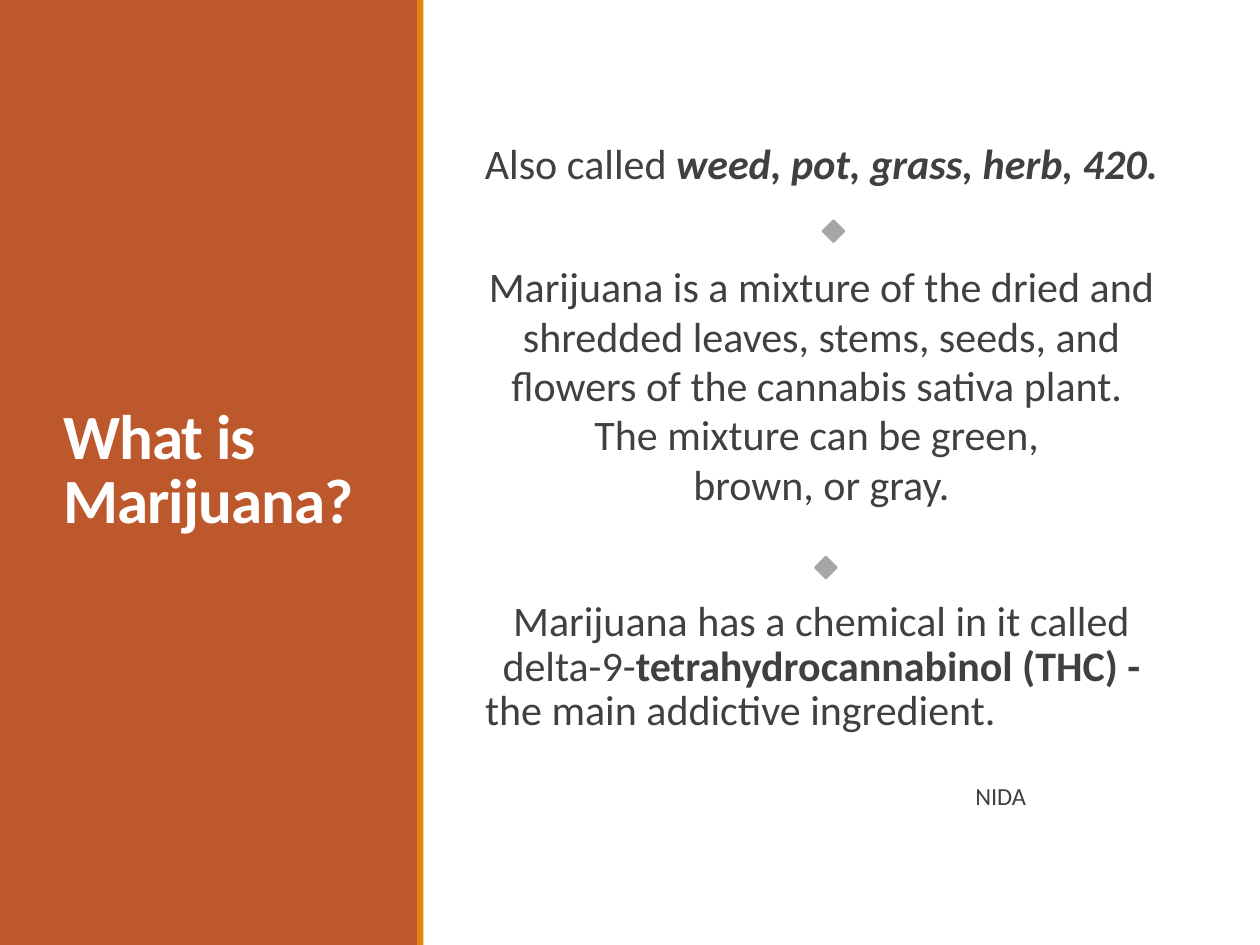
from dataclasses import dataclass

from lxml import etree
from pptx import Presentation
from pptx.dml.color import RGBColor
from pptx.enum.shapes import MSO_SHAPE
from pptx.enum.text import MSO_ANCHOR, MSO_AUTO_SIZE, PP_ALIGN
from pptx.oxml.ns import qn
from pptx.util import Inches, Pt

RECT, DIAMOND = MSO_SHAPE.RECTANGLE, MSO_SHAPE.DIAMOND
LEFT, CENTER = PP_ALIGN.LEFT, PP_ALIGN.CENTER
TOP, MIDDLE = MSO_ANCHOR.TOP, MSO_ANCHOR.MIDDLE
FONT = "Calibri"
RUST, ORANGE, GRAY, INK, WHITE = "BD582C", "E48312", "A6A6A6", "404040", "FFFFFF"
TIGHT, LOOSE = 0.88, 0.98


@dataclass
class Box:
    left: float
    top: float
    width: float
    height: float


@dataclass
class Para:
    """Runs are (text, style) pairs; style holds b for bold, i for italic."""
    runs: list
    before: float = 0
    after: float = 0
    line: float = LOOSE
    align: int = CENTER
    indent: float = 0.1
    right: float = 0.1
    size: float = 24


PARAS = [
    Para([("Also called ", ""), ("weed, pot, grass, herb, 420.", "bi")],
         after=2, line=TIGHT, indent=0, right=0),
    Para([("Marijuana is a mixture of the dried and shredded leaves, stems, "
           "seeds, and flowers of the cannabis sativa plant. ", "")], before=41),
    Para([("The mixture can be green, ", "")]),
    Para([("brown, or gray.", "")]),
    Para([("Marijuana has a chemical in it called delta-9-", ""),
          ("tetrahydrocannabinol (THC) -", "b")], before=52, line=TIGHT),
    Para([("the main addictive ingredient.", "")], after=2, line=TIGHT, align=LEFT),
    Para([("NIDA", "")], before=27, line=TIGHT, align=LEFT, indent=3.99, size=14),
]


def color(code: str) -> RGBColor:
    return RGBColor.from_string(code)


def place(shape, box: Box) -> None:
    shape.left, shape.top = Inches(box.left), Inches(box.top)
    shape.width, shape.height = Inches(box.width), Inches(box.height)


def draw(slide, kind: int, box: Box, fill: str, edge: float = 0) -> None:
    shape = slide.shapes.add_shape(kind, 0, 0, 0, 0)
    place(shape, box)
    shape.shadow.inherit = False
    shape.fill.solid()
    shape.fill.fore_color.rgb = color(fill)
    if edge:
        shape.line.color.rgb = color(fill)
        shape.line.width = Pt(edge)
    else:
        shape.line.fill.background()


def style(font, size: float, code: str) -> None:
    font.name, font.size = FONT, Pt(size)
    font.color.rgb = color(code)


def fill_title(title) -> None:
    place(title, Box(0.4, 0.66, 2.53, 6.17))
    frame = title.text_frame
    frame.word_wrap, frame.auto_size = True, MSO_AUTO_SIZE.NONE
    frame.vertical_anchor = MIDDLE
    para = frame.paragraphs[0]
    para.alignment, para.line_spacing = LEFT, 0.85
    run = para.add_run()
    run.text = "What is Marijuana?"
    style(para.font, 36, WHITE)
    para.font.bold = True
    run.font.bold = True
    run.font.size = Pt(36)
    run.font.color.rgb = color(WHITE)
    run.font.name = FONT
    run.font._element.set("spc", "-50")


def write(para, item: Para) -> None:
    para.alignment, para.line_spacing = item.align, item.line
    para.space_before, para.space_after = Pt(item.before), Pt(item.after)
    props = para._p.get_or_add_pPr()
    props.set("marL", str(Inches(item.indent)))
    props.set("marR", str(Inches(item.right)))
    props.set("indent", "0")
    etree.SubElement(props, qn("a:buNone"))
    style(para.font, item.size, INK)
    for text, look in item.runs:
        run = para.add_run()
        run.text = text
        style(run.font, item.size, INK)
        run.font.bold, run.font.italic = "b" in look, "i" in look


def fill_body(body) -> None:
    place(body, Box(3.75, 0.71, 5.54, 6.17))
    frame = body.text_frame
    frame.word_wrap, frame.auto_size = True, MSO_AUTO_SIZE.NONE
    frame.vertical_anchor = TOP
    frame.margin_left = frame.margin_right = 0
    frame.margin_top, frame.margin_bottom = Inches(0.43), Inches(0.05)
    for n, item in enumerate(PARAS):
        write(frame.add_paragraph() if n else frame.paragraphs[0], item)


def main() -> None:
    deck = Presentation()
    deck.slide_width, deck.slide_height = Inches(10), Inches(7.5)
    slide = deck.slides.add_slide(deck.slide_layouts[1])
    title, body = slide.shapes.title, slide.placeholders[1]
    draw(slide, RECT, Box(0, 0, 3.32, 7.5), RUST)
    draw(slide, RECT, Box(3.31, 0, 0.05, 7.5), ORANGE)
    for shape in (title, body):  # bring text in front of the panel
        shape.element.getparent().append(shape.element)
    fill_title(title)
    fill_body(body)
    for left, top in ((6.53, 1.75), (6.47, 4.42)):
        draw(slide, DIAMOND, Box(left, top, 0.17, 0.17), GRAY, 1.25)
    deck.save("out.pptx")


if __name__ == "__main__":
    main()
